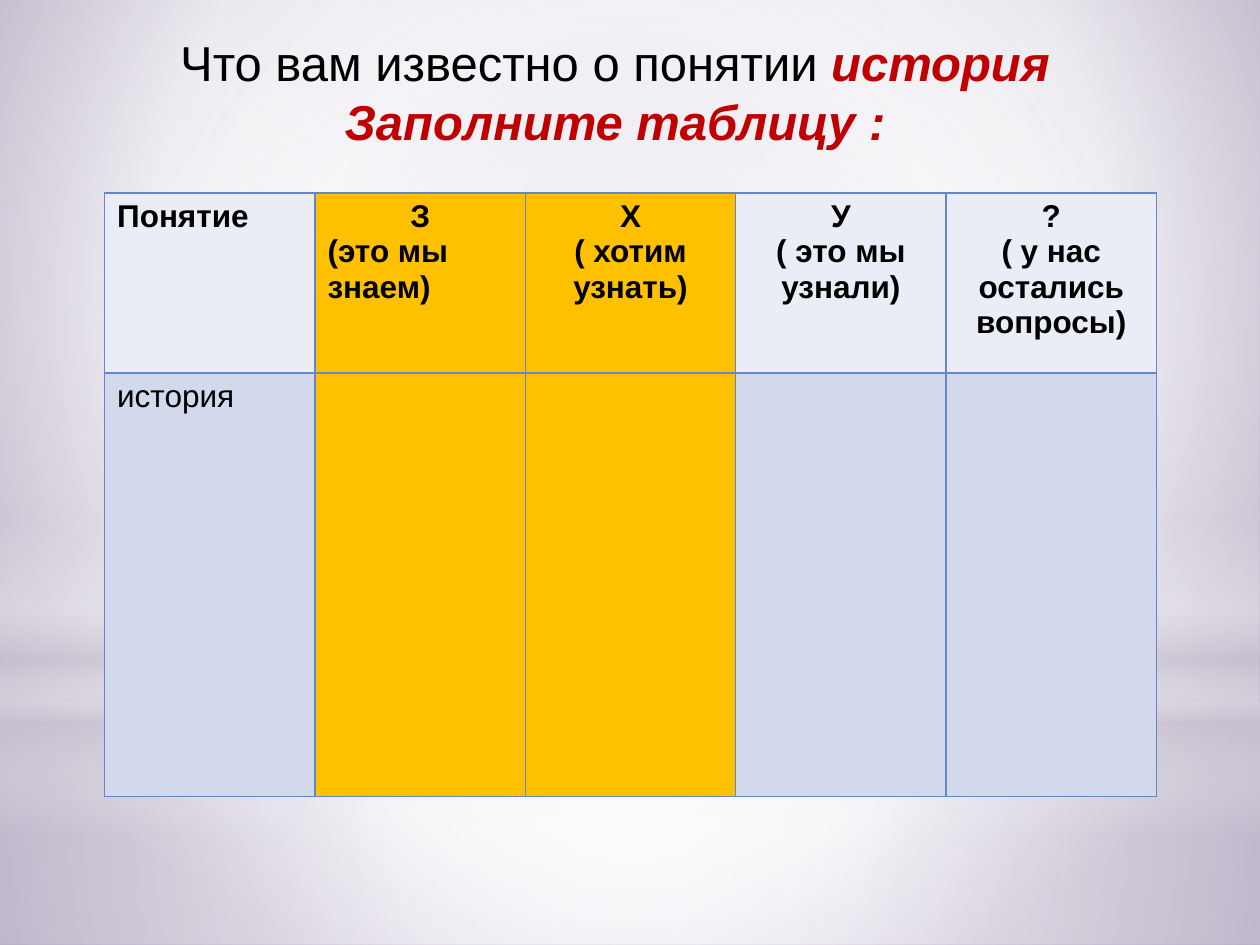
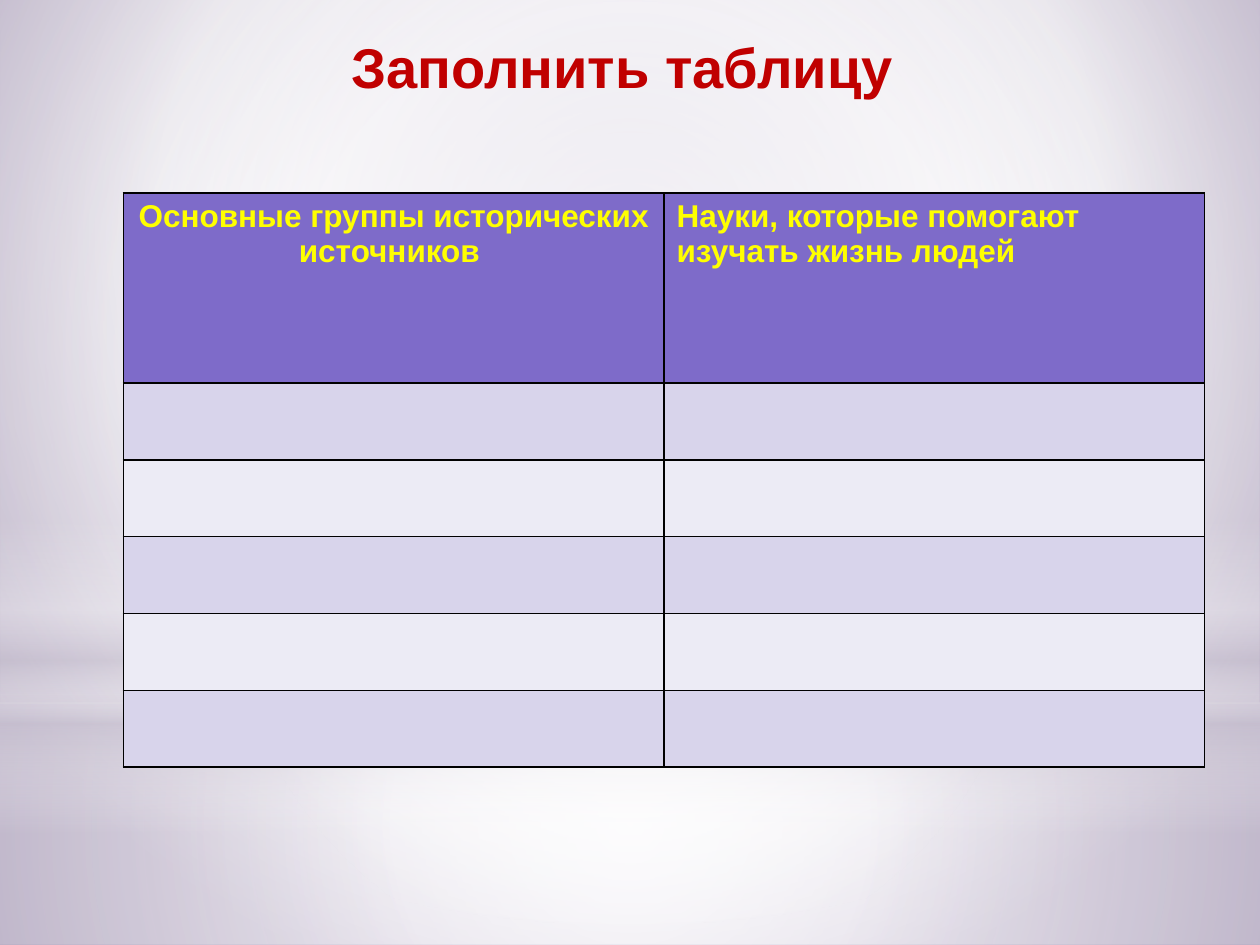
from dataclasses import dataclass
from typing import NamedTuple

from lxml.etree import SubElement
from pptx import Presentation
from pptx.dml.color import RGBColor
from pptx.enum.shapes import MSO_SHAPE
from pptx.enum.text import MSO_AUTO_SIZE, PP_ALIGN as Align
from pptx.oxml.ns import qn
from pptx.util import Inches, Pt

FONT = "Arial"
BLACK = RGBColor(0x00, 0x00, 0x00)
WHITE = RGBColor(0xFF, 0xFF, 0xFF)
RED = RGBColor(0xC0, 0x00, 0x00)
YELLOW = RGBColor(0xFF, 0xFF, 0x00)
AMBER = RGBColor(0xFF, 0xC0, 0x00)
BLUE = RGBColor(0x65, 0x85, 0xCF)
BLUE_TINT = RGBColor(0xD3, 0xD9, 0xED)
BLUE_PALE = RGBColor(0xEA, 0xED, 0xF6)
VIOLET = RGBColor(0x7E, 0x6B, 0xC9)
VIOLET_TINT = RGBColor(0xD8, 0xD4, 0xEB)
VIOLET_PALE = RGBColor(0xEC, 0xEB, 0xF5)
LILAC = RGBColor(0xC1, 0xB7, 0xCD)
MAUVE = RGBColor(0xA1, 0x91, 0xB5)
MIST = RGBColor(0xC9, 0xC2, 0xD1)


class Box(NamedTuple):
    left: float
    top: float
    width: float
    height: float

    def lengths(self) -> list:
        """Return the four sides as lengths."""
        return [Inches(value) for value in self]


class Stop(NamedTuple):
    position: int
    color: RGBColor
    opacity: int = 100


@dataclass(frozen=True)
class Gradient:
    stops: tuple[Stop, ...]
    focus: tuple[int, ...] = (50, 50, 50, 50)
    angle: int | None = None


@dataclass(frozen=True)
class Glow:
    kind: MSO_SHAPE
    box: Box
    gradient: Gradient


class Run(NamedTuple):
    text: str
    color: RGBColor
    bold: bool = False
    italic: bool = False


class Line(NamedTuple):
    runs: tuple[Run, ...]
    align: Align = Align.CENTER


class Cell(NamedTuple):
    fill: RGBColor
    lines: tuple[Line, ...] = ()


@dataclass(frozen=True)
class Title:
    box: Box
    size: int
    lines: tuple[Line, ...]


@dataclass(frozen=True)
class Grid:
    left: float
    column_width: float
    row_heights: tuple[float, ...]
    border: RGBColor
    rows: tuple[tuple[Cell, ...], ...]


TABLE_TOP = 1.53
CELL_SIZE = 18
BACKDROP = Gradient((Stop(0, LILAC), Stop(60, WHITE), Stop(100, MAUVE)), (20, 10, 20, 60))
GLOWS = (
    Glow(MSO_SHAPE.RECTANGLE, Box(0, 5.58, 10, 1.92),
         Gradient((Stop(0, WHITE, 91), Stop(37, WHITE, 76), Stop(100, MIST, 79)))),
    Glow(MSO_SHAPE.RECTANGLE, Box(0, 0, 10, 5.58),
         Gradient((Stop(0, WHITE, 89), Stop(48, WHITE, 62), Stop(100, MIST, 79)))),
    Glow(MSO_SHAPE.RECTANGLE, Box(0, 4.12, 10, 2.5),
         Gradient((Stop(0, WHITE, 0), Stop(29, WHITE, 30), Stop(45, MIST, 40),
                   Stop(55, WHITE, 26), Stop(65, MIST, 60), Stop(100, WHITE, 0)), angle=90)),
    Glow(MSO_SHAPE.OVAL, Box(0, 1.75, 10, 5.58),
         Gradient((Stop(0, WHITE), Stop(56, WHITE, 0)))),
)


def heading(text: str, color: RGBColor, align: Align = Align.CENTER) -> Line:
    """Return a bold line for a header cell."""
    return Line((Run(text, color, bold=True),), align)


def question(letter: str, meaning: str, fill: RGBColor, align: Align = Align.CENTER) -> Cell:
    """Return a header cell with a letter above its meaning."""
    return Cell(fill, (heading(letter, BLACK), heading(meaning, BLACK, align)))


CONCEPT_TITLE = Title(Box(0.59, 0.21, 8.58, 1.04), 28, (
    Line((Run("Что вам известно о понятии ", BLACK), Run("история", RED, True, True))),
    Line((Run("Заполните таблицу :", RED, True, True),)),
))
CONCEPT_GRID = Grid(0.83, 1.67, (1.43, 3.36), BLUE, (
    (
        Cell(BLUE_PALE, (heading("Понятие", BLACK, Align.LEFT),)),
        question("З", "(это мы знаем)", AMBER, Align.LEFT),
        question("Х", "( хотим узнать)", AMBER),
        question("У", "( это мы узнали)", BLUE_PALE),
        question("?", "( у нас остались вопросы)", BLUE_PALE),
    ),
    (
        Cell(BLUE_TINT, (Line((Run("история", BLACK),), Align.LEFT),)),
        *(Cell(fill) for fill in (AMBER, AMBER, BLUE_TINT, BLUE_TINT)),
    ),
))
SOURCES_TITLE = Title(Box(0.51, 0.21, 8.98, 0.64), 32,
                      (heading("Заполнить таблицу ", RED),))
SOURCES_GRID = Grid(0.98, 4.29, (1.51,) + (0.61,) * 5, BLACK, (
    (
        Cell(VIOLET, (heading("Основные группы исторических источников ", YELLOW),)),
        Cell(VIOLET, (heading("Науки, которые помогают изучать жизнь людей", YELLOW,
                              Align.LEFT),)),
    ),
    *((Cell(VIOLET_PALE if row % 2 else VIOLET_TINT),) * 2 for row in range(5)),
))


def apply_gradient(fill, properties, gradient: Gradient) -> None:
    """Give a fill the stops and direction of a gradient."""
    fill.gradient()
    element = properties.find(qn("a:gradFill"))
    for child in list(element):
        element.remove(child)
    stops = SubElement(element, qn("a:gsLst"))
    for stop in gradient.stops:
        entry = SubElement(stops, qn("a:gs"), pos=str(stop.position * 1000))
        color = SubElement(entry, qn("a:srgbClr"), val=str(stop.color))
        if stop.opacity < 100:
            SubElement(color, qn("a:alpha"), val=str(stop.opacity * 1000))
    if gradient.angle is None:
        shading = SubElement(element, qn("a:path"), {"path": "circle"})
        sides = {side: str(value * 1000) for side, value in zip("ltrb", gradient.focus)}
        SubElement(shading, qn("a:fillToRect"), sides)
    else:
        SubElement(element, qn("a:lin"), ang=str(gradient.angle * 60000), scaled="0")


def set_backdrop(master) -> None:
    """Set the background that all slides inherit."""
    fill = master.background.fill
    properties = next(master.element.iter(qn("p:bgPr")))
    apply_gradient(fill, properties, BACKDROP)


def draw_glow(slide, glow: Glow) -> None:
    """Draw one translucent shape of the backdrop."""
    shape = slide.shapes.add_shape(glow.kind, *glow.box.lengths())
    shape.shadow.inherit = False
    shape.line.fill.background()
    apply_gradient(shape.fill, shape.element.spPr, glow.gradient)


def write_lines(text_frame, lines: tuple[Line, ...], size: int) -> None:
    """Write lines as paragraphs of one size."""
    for index, line in enumerate(lines):
        paragraph = text_frame.add_paragraph() if index else text_frame.paragraphs[0]
        paragraph.alignment = line.align
        paragraph.font.name = FONT
        paragraph.font.size = Pt(size)
        for piece in line.runs:
            run = paragraph.add_run()
            run.text = piece.text
            run.font.bold = piece.bold
            run.font.italic = piece.italic
            run.font.color.rgb = piece.color


def draw_title(slide, title: Title) -> None:
    """Draw the slide title."""
    text_frame = slide.shapes.add_textbox(*title.box.lengths()).text_frame
    text_frame.word_wrap = True
    text_frame.auto_size = MSO_AUTO_SIZE.SHAPE_TO_FIT_TEXT
    write_lines(text_frame, title.lines, title.size)


def set_borders(cell, color: RGBColor) -> None:
    """Draw thin lines on all sides of a table cell."""
    properties = cell._tc.get_or_add_tcPr()
    for side in ("a:lnL", "a:lnR", "a:lnT", "a:lnB"):
        border = SubElement(properties, qn(side), w=str(Pt(1)))
        fill = SubElement(border, qn("a:solidFill"))
        SubElement(fill, qn("a:srgbClr"), val=str(color))


def draw_grid(slide, grid: Grid) -> None:
    """Draw a table with equal columns."""
    columns = len(grid.rows[0])
    box = Box(grid.left, TABLE_TOP, grid.column_width * columns, sum(grid.row_heights))
    table = slide.shapes.add_table(len(grid.rows), columns, *box.lengths()).table
    table.first_row = table.horz_banding = False
    for column in table.columns:
        column.width = Inches(grid.column_width)
    for row, height, contents in zip(table.rows, grid.row_heights, grid.rows):
        row.height = Inches(height)
        for cell, content in zip(row.cells, contents):
            set_borders(cell, grid.border)
            cell.fill.solid()
            cell.fill.fore_color.rgb = content.fill
            write_lines(cell.text_frame, content.lines, CELL_SIZE)


def main() -> None:
    """Build and save the presentation."""
    presentation = Presentation()
    presentation.slide_width = Inches(10)
    presentation.slide_height = Inches(7.5)
    set_backdrop(presentation.slide_master)
    pages = ((CONCEPT_TITLE, CONCEPT_GRID), (SOURCES_TITLE, SOURCES_GRID))
    for title, grid in pages:
        slide = presentation.slides.add_slide(presentation.slide_layouts[6])
        for glow in GLOWS:
            draw_glow(slide, glow)
        draw_title(slide, title)
        draw_grid(slide, grid)
    presentation.save("out.pptx")


if __name__ == "__main__":
    main()
